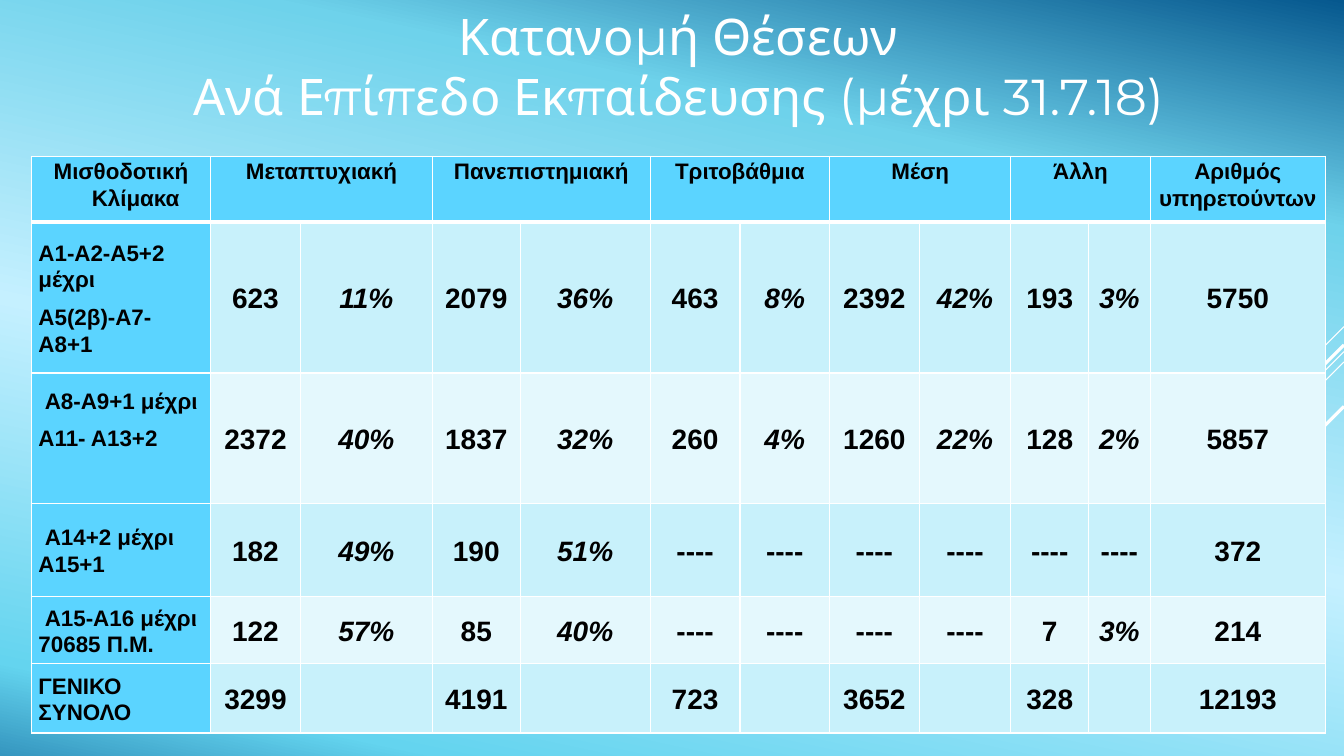
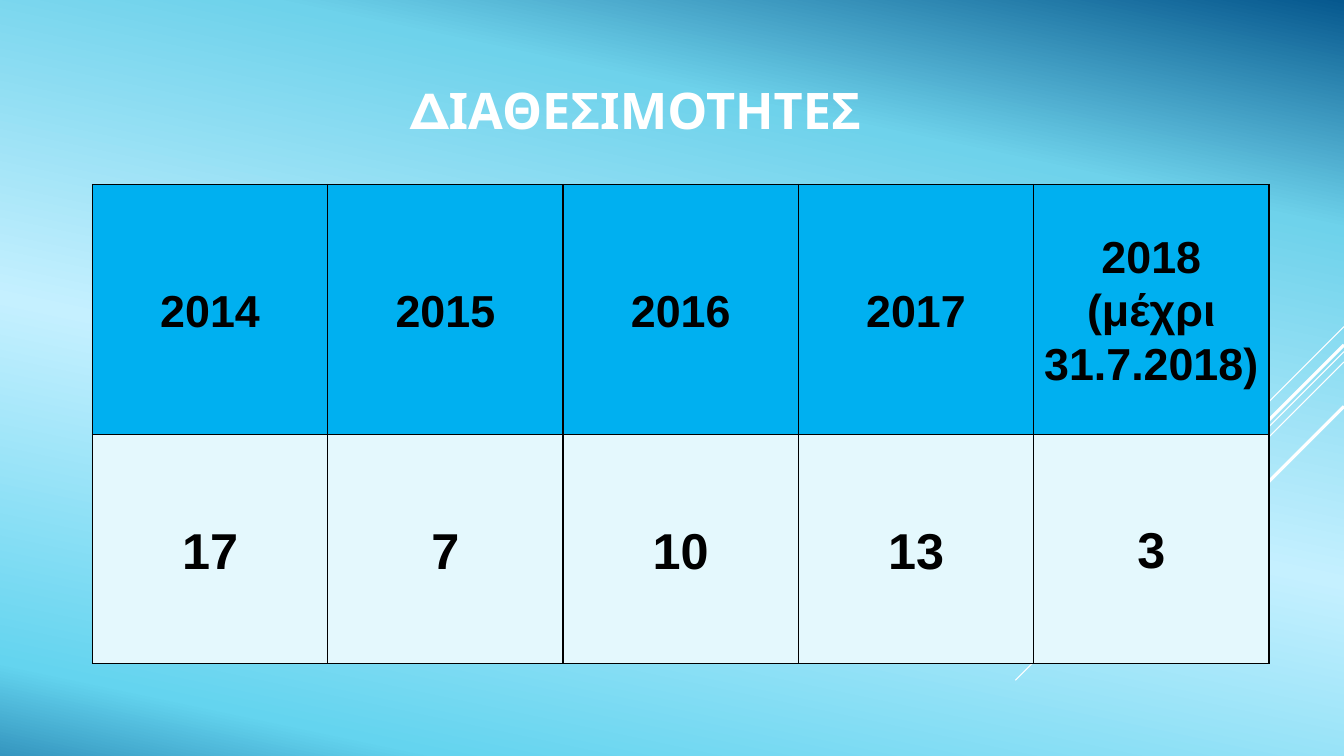
from lxml import etree
from pptx import Presentation
from pptx import util as u
from pptx.dml.color import RGBColor
from pptx.enum import shapes, text
from pptx.oxml import ns

WHITE = RGBColor(0xFF, 0xFF, 0xFF)
BLACK = RGBColor(0x00, 0x00, 0x00)
SKY = RGBColor(0x5B, 0xD4, 0xFF)
AZURE = RGBColor(0x00, 0xB0, 0xF0)
PALE = RGBColor(0xC8, 0xF1, 0xFB)
PALEST = RGBColor(0xE4, 0xF8, 0xFD)
BACKGROUND = [(0, "06588E"), (22, "6ED2EB"), (56, "C5F0FF"), (91, "64D4EF"), (100, "3596BF")]

WIDTH, HEIGHT = 33.87, 19.05
# Diagonals from the right edge: top, horizontal reach, line width
DIAGONALS = [(8.23, 2.54, 0.75), (8.86, 8.28, 0.75), (9.12, 5.27, 0.75),
             (8.69, 4.85, 2.25), (10.24, 3.54, 2.25)]
LEFT, CENTER = text.PP_ALIGN.LEFT, text.PP_ALIGN.CENTER
TOP, MIDDLE = text.MSO_ANCHOR.TOP, text.MSO_ANCHOR.MIDDLE


class Deck:
    title_font = "Montserrat"
    table_font = "Arial"

    def __init__(self):
        self.deck = Presentation()
        self.deck.slide_width, self.deck.slide_height = u.Cm(WIDTH), u.Cm(HEIGHT)
        self.page = None
        self.paint_background()

    def paint_background(self):
        master = self.deck.slide_master
        fill = master.background.fill
        fill.gradient()
        fill.gradient_angle = 360 - 102
        stops = master.element.find(".//" + ns.qn("a:gsLst"))
        for stop in list(stops):
            stops.remove(stop)
        for percent, color in BACKGROUND:
            stop = etree.SubElement(stops, ns.qn("a:gs"), pos=str(percent * 1000))
            etree.SubElement(stop, ns.qn("a:srgbClr"), val=color)

    def add_page(self, title, left, top, width, height, anchor=MIDDLE, bold=False):
        self.page = self.deck.slides.add_slide(self.deck.slide_layouts[5])
        for diagonal in DIAGONALS:
            self.add_diagonal(*diagonal)
        box = self.page.shapes.title
        box.left, box.top, box.width, box.height = map(u.Cm, (left, top, width, height))
        frame = box.text_frame
        frame.auto_size = text.MSO_AUTO_SIZE.NONE
        frame.vertical_anchor = anchor
        frame.text = title
        para = frame.paragraphs[0]
        para.alignment = CENTER
        self.set_font(para, self.title_font, 36, WHITE, bold)

    def add_diagonal(self, top, reach, weight):
        line = self.page.shapes.add_connector(
            shapes.MSO_CONNECTOR.STRAIGHT, u.Cm(WIDTH), u.Cm(top),
            u.Cm(WIDTH - reach), u.Cm(top + reach))
        line.line.color.rgb = WHITE
        line.line.width = u.Pt(weight)
        etree.SubElement(line.element.spPr, ns.qn("a:effectLst"))

    def add_table(self, left, top, columns, rows):
        table = self.page.shapes.add_table(
            len(rows), len(columns), u.Cm(left), u.Cm(top),
            u.Cm(sum(columns)), u.Cm(sum(rows))).table
        table.first_row = table.horz_banding = False
        for column, width in zip(table.columns, columns):
            column.width = u.Cm(width)
        for row, height in zip(table.rows, rows):
            row.height = u.Cm(height)
        return table

    def format_cell(self, cell, fill, border, top=1, bottom=1):
        cell.fill.solid()
        cell.fill.fore_color.rgb = fill
        cell.margin_left = cell.margin_right = u.Cm(0.18)
        cell.margin_top, cell.margin_bottom = u.Cm(0.03), 0
        properties = cell._tc.get_or_add_tcPr()
        sides = [("a:lnL", 1), ("a:lnR", 1), ("a:lnT", top), ("a:lnB", bottom)]
        for position, (tag, weight) in enumerate(sides):
            line = etree.Element(ns.qn(tag), w=str(u.Pt(weight)))
            solid = etree.SubElement(line, ns.qn("a:solidFill"))
            etree.SubElement(solid, ns.qn("a:srgbClr"), val=str(border))
            properties.insert(position, line)

    def write_cell(self, cell, words, size, align=CENTER, anchor=MIDDLE):
        cell.vertical_anchor = anchor
        cell.text_frame.text = words
        for para in cell.text_frame.paragraphs:
            para.alignment = align
            para.line_spacing = 1.07
            para.space_after = u.Pt(8)
            self.set_font(para, self.table_font, size, BLACK, True)
            para.font.italic = words.endswith("%")

    @staticmethod
    def set_font(para, name, size, color, bold):
        para.font.name, para.font.size, para.font.bold = name, u.Pt(size), bold
        para.font.color.rgb = color

    @staticmethod
    def indent(cell, first, margin=0.0):
        """Indent the first paragraph of a cell."""
        properties = cell.text_frame.paragraphs[0]._p.get_or_add_pPr()
        properties.set("marL", str(u.Cm(margin)))
        properties.set("indent", str(u.Cm(first)))


def add_positions(deck):
    deck.add_page("Κατανομή Θέσεων\vΑνά Επίπεδο Εκπαίδευσης (μέχρι 31.7.18)",
                  1.24, 0, 31.72, 4.88, anchor=TOP)
    headings = ["Μισθοδοτική Κλίμακα", "Μεταπτυχιακή", "", "Πανεπιστημιακή", "",
                "Τριτοβάθμια", "", "Μέση", "", "Άλλη", "", "Αριθμός υπηρετούντων"]
    none = "----"
    records = [
        ["Α1-Α2-Α5+2 μέχρι\nΑ5(2β)-Α7-Α8+1", "623", "11%", "2079", "36%",
         "463", "8%", "2392", "42%", "193", "3%", "5750"],
        ["Α8-Α9+1 μέχρι\nΑ11- Α13+2", "2372", "40%", "1837", "32%",
         "260", "4%", "1260", "22%", "128", "2%", "5857"],
        ["Α14+2 μέχρι Α15+1", "182", "49%", "190", "51%"] + [none] * 6 + ["372"],
        ["Α15-Α16 μέχρι 70685 Π.Μ.", "122", "57%", "85", "40%"] + [none] * 4
        + ["7", "3%", "214"],
        ["ΓΕΝΙΚΟ ΣΥΝΟΛΟ", "3299", "", "4191", "", "723", "", "3652", "",
         "328", "", "12193"],
    ]
    table = deck.add_table(
        0.79, 3.94,
        [4.52, 2.26, 3.33, 2.21, 3.28, 2.26, 2.26, 2.26, 2.31, 1.96, 1.55, 4.42],
        [1.65, 3.81, 3.28, 2.36, 1.68, 1.75])

    # Heading row, with a heavy rule below
    for column, heading in enumerate(headings):
        cell = table.cell(0, column)
        deck.format_cell(cell, SKY, WHITE, bottom=3)
        if heading:
            deck.write_cell(cell, heading, 16, anchor=TOP)
    for column in range(1, 11, 2):
        table.cell(0, column).merge(table.cell(0, column + 1))
    deck.indent(table.cell(0, 0), -0.74, 0.74)

    # Pay scales, counts and shares
    for row, record in enumerate(records, 1):
        band = PALE if row % 2 else PALEST
        for column, words in enumerate(record):
            cell = table.cell(row, column)
            deck.format_cell(cell, band if column else SKY, WHITE, top=3 if row == 1 else 1)
            if words:
                size, align = (20, CENTER) if column else (16, LEFT)
                deck.write_cell(cell, words, size, align)
    for row in (2, 3, 4):
        deck.indent(table.cell(row, 0), 0.16)
    table.cell(2, 0).margin_bottom = u.Cm(0.97)


def add_suspensions(deck):
    deck.add_page("ΔΙΑΘΕΣΙΜΟΤΗΤΕΣ", 4.17, 0.66, 23.7, 4.19, bold=True)
    years = ["2014", "2015", "2016", "2017", "2018 (μέχρι 31.7.2018)"]
    counts = ["17", "7", "10", "13", "3"]
    table = deck.add_table(2.33, 4.65, [5.93] * len(years), [6.3, 5.77])
    for row, (record, fill, size) in enumerate([(years, AZURE, 32), (counts, PALEST, 36)]):
        for column, words in enumerate(record):
            cell = table.cell(row, column)
            deck.format_cell(cell, fill, BLACK)
            deck.write_cell(cell, words, size)
        # The last column holds the long label, so it has no margins
        cell.margin_left = cell.margin_right = cell.margin_top = 0


def main():
    deck = Deck()
    add_positions(deck)
    add_suspensions(deck)
    deck.deck.save("out.pptx")


if __name__ == "__main__":
    main()
